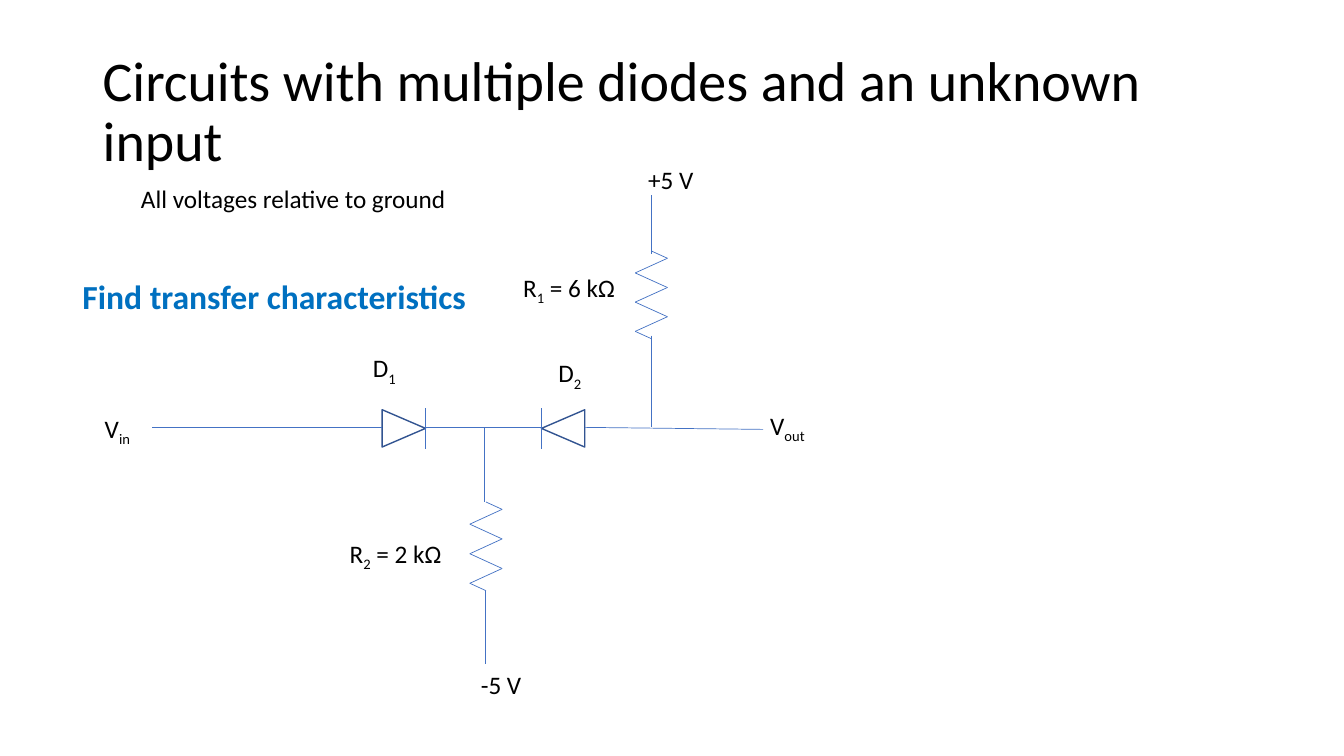
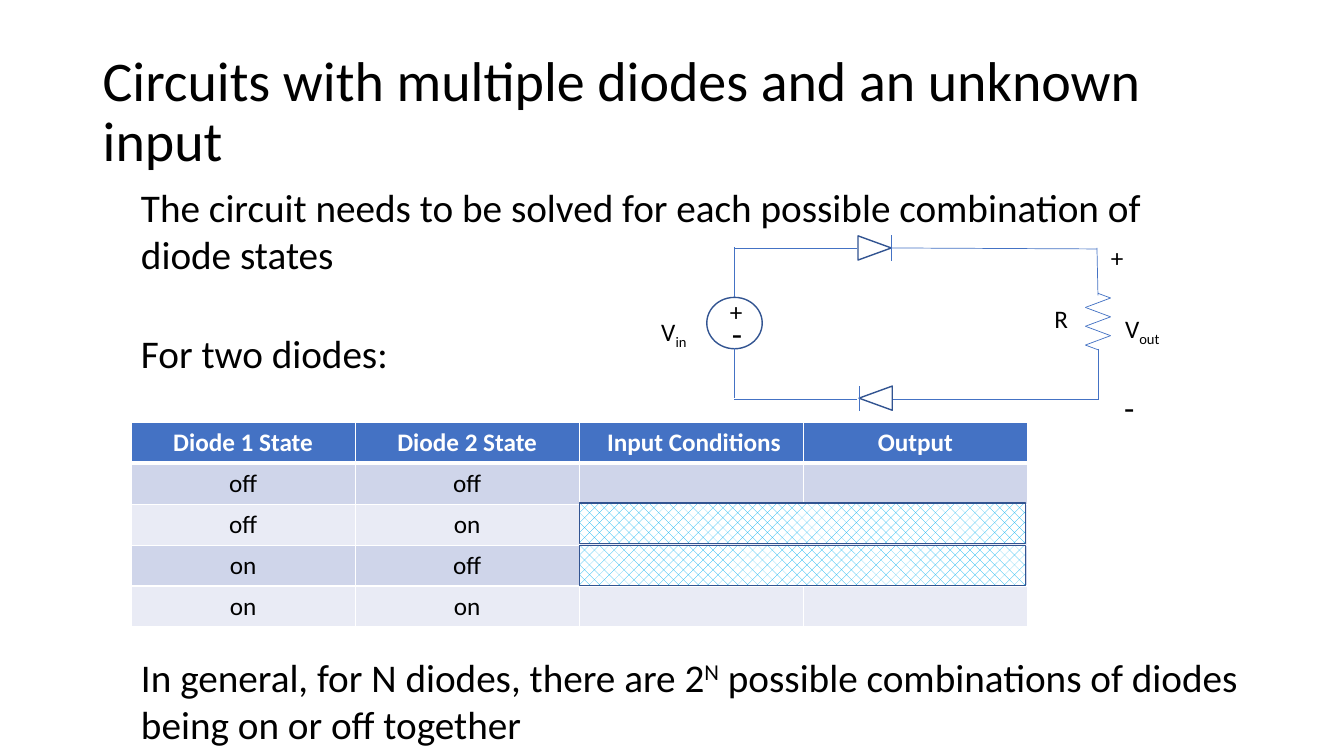
from dataclasses import dataclass
from itertools import pairwise

import pptx
import pptx.util
import pptx.dml.color
import pptx.enum.dml
import pptx.enum.shapes
import pptx.enum.text
import pptx.oxml
import pptx.oxml.ns

Inches = pptx.util.Inches
Pt = pptx.util.Pt
Shape = pptx.enum.shapes.MSO_SHAPE
Anchor = pptx.enum.text.MSO_ANCHOR
Align = pptx.enum.text.PP_ALIGN
TITLE = "Circuits with multiple diodes and an unknown input"
SUB, SUP = -25000, 30000


# Colours and type sizes
@dataclass(frozen=True)
class Theme:
    font: str = "Calibri"
    ink: str = "000000"
    white: str = "FFFFFF"
    accent: str = "0070C0"
    wire: str = "4472C4"
    edge: str = "325491"
    hatch: str = "00B0F0"
    head: str = "4472C4"
    bands: tuple = ("CFD5EA", "E9EBF5")
    title: int = 40
    body: int = 28
    large: int = 24
    small: int = 18
    thin: float = 0.5
    line: float = 1


THEME = Theme()


# Repeated parts; lengths are in inches
@dataclass(frozen=True)
class Label:
    x: float
    y: float
    w: float
    h: float
    runs: tuple  # (text, baseline shift) pairs
    size: int = THEME.small
    color: str = THEME.ink
    bold: bool = False


@dataclass(frozen=True)
class Wire:
    x1: float
    y1: float
    x2: float
    y2: float


@dataclass(frozen=True)
class Diode:
    tip: float
    y: float
    long: float
    wide: float
    bar: float
    way: int  # 1 points right, -1 points left


@dataclass(frozen=True)
class Zigzag:
    x: float
    top: float
    wide: float
    high: float


def plain(text: str) -> tuple:
    return ((text, 0),)


def color(code: str):
    return pptx.dml.color.RGBColor.from_string(code)


def add_runs(para, runs: tuple, size: int, code: str, bold: bool = False) -> None:
    for text, shift in runs:
        run = para.add_run()
        run.text = text
        font = run.font
        font.name, font.size, font.bold = THEME.font, Pt(size), bold
        font.color.rgb = color(code)
        if shift:
            run._r.get_or_add_rPr().set("baseline", str(shift))


def add_label(slide, label: Label):
    box = slide.shapes.add_textbox(*map(Inches, (label.x, label.y, label.w, label.h)))
    frame = box.text_frame
    frame.word_wrap = True
    add_runs(frame.paragraphs[0], label.runs, label.size, label.color, label.bold)
    return frame


def add_title(slide) -> None:
    frame = add_label(slide, Label(0.92, 0.4, 11.79, 1.45, plain(TITLE), THEME.title))
    frame.vertical_anchor = Anchor.MIDDLE
    frame.paragraphs[0].line_spacing = 0.9


def add_wire(slide, wire: Wire) -> None:
    line = slide.shapes.add_connector(
        pptx.enum.shapes.MSO_CONNECTOR.STRAIGHT,
        *map(Inches, (wire.x1, wire.y1, wire.x2, wire.y2)))
    line.line.color.rgb = color(THEME.wire)
    line.line.width = Pt(THEME.thin)
    line._element.spPr.append(pptx.oxml.parse_xml(
        f"<a:effectLst {pptx.oxml.ns.nsdecls('a')}/>"))


def add_shape(slide, kind, x: float, y: float, w: float, h: float):
    shape = slide.shapes.add_shape(kind, *map(Inches, (x, y, w, h)))
    shape.shadow.inherit = False
    shape.fill.background()
    shape.line.color.rgb = color(THEME.edge)
    shape.line.width = Pt(THEME.line)
    return shape


def add_diode(slide, diode: Diode) -> None:
    mid = diode.tip - diode.way * diode.long / 2
    shape = add_shape(slide, Shape.ISOSCELES_TRIANGLE, mid - diode.wide / 2,
                      diode.y - diode.long / 2, diode.wide, diode.long)
    shape.rotation = 90 * diode.way % 360
    half = diode.bar / 2
    add_wire(slide, Wire(diode.tip, diode.y + half, diode.tip, diode.y - half))


def add_zigzag(slide, part: Zigzag) -> None:
    # Five full strokes with a half stroke at each end
    turns = [(part.x + part.wide / 2 * (-1) ** i, part.top + part.high * (2 * i + 1) / 12)
             for i in range(6)]
    points = [(part.x, part.top), *turns, (part.x, part.top + part.high)]
    for start, end in pairwise(points):
        add_wire(slide, Wire(*start, *end))


DRAW = {Label: add_label, Wire: add_wire, Diode: add_diode, Zigzag: add_zigzag}


def draw(slide, parts: tuple) -> None:
    for part in parts:
        DRAW[type(part)](slide, part)


def add_borders(cell, head: bool) -> None:
    for side in "LRTB":
        width = Pt(3 if head and side == "B" else THEME.line)
        cell._tc.get_or_add_tcPr().append(pptx.oxml.parse_xml(
            f'<a:ln{side} {pptx.oxml.ns.nsdecls("a")} w="{width}"><a:solidFill>'
            f'<a:srgbClr val="{THEME.white}"/></a:solidFill></a:ln{side}>'))


def add_table(slide, rows: tuple) -> None:
    table = slide.shapes.add_table(
        len(rows), 4, *map(Inches, (1.3, 4.19, 8.89, 2.03))).table
    for r, row in enumerate(rows):
        head = r == 0
        for c, text in enumerate(row):
            cell = table.cell(r, c)
            add_borders(cell, head)
            cell.fill.solid()
            cell.fill.fore_color.rgb = color(THEME.head if head else THEME.bands[(r - 1) % 2])
            para = cell.text_frame.paragraphs[0]
            para.alignment = Align.CENTER
            if text:
                add_runs(para, plain(text), THEME.small,
                         THEME.white if head else THEME.ink, head)


def add_cover(slide, y: float) -> None:
    cover = add_shape(slide, Shape.RECTANGLE, 5.75, y, 4.42, 0.4)
    cover.fill.patterned()
    cover.fill.pattern = pptx.enum.dml.MSO_PATTERN.PERCENT_30
    cover.fill.fore_color.rgb = color(THEME.hatch)
    cover.fill.back_color.rgb = color(THEME.white)


V_IN = (("V", 0), ("in", SUB))
V_OUT = (("V", 0), ("out", SUB))

# Slide 1: circuit with two supplies
SUPPLY = (
    Diode(4.22, 4.25, 0.43, 0.37, 0.4, 1),
    Diode(5.37, 4.25, 0.43, 0.37, 0.4, -1),
    Wire(3.79, 4.24, 1.51, 4.24),
    Wire(5.37, 4.24, 4.22, 4.24),
    Wire(5.8, 4.24, 7.57, 4.26),
    Wire(4.8, 4.24, 4.8, 4.98),
    Zigzag(4.82, 4.98, 0.32, 0.88),
    Wire(4.81, 5.86, 4.81, 6.59),
    Wire(6.46, 2.52, 6.46, 1.93),
    Zigzag(6.46, 2.49, 0.32, 0.87),
    Wire(6.46, 3.33, 6.46, 4.24),
    Label(0.94, 4.05, 0.71, 0.4, V_IN),
    Label(7.54, 4.02, 0.71, 0.4, V_OUT),
    Label(3.37, 5.29, 1.3, 0.4, (("R", 0), ("2", SUB), (" = 2 kΩ", 0))),
    Label(5.09, 2.65, 1.3, 0.4, (("R", 0), ("1", SUB), (" = 6 kΩ", 0))),
    Label(4.67, 6.59, 0.71, 0.4, plain("-5 V")),
    Label(6.33, 1.58, 0.71, 0.4, plain("+5 V")),
    Label(3.6, 3.45, 0.63, 0.4, (("D", 0), ("1", SUB))),
    Label(5.44, 3.5, 0.63, 0.4, (("D", 0), ("2", SUB))),
    Label(1.3, 1.77, 3.29, 0.4, plain("All voltages relative to ground")),
    Label(0.72, 2.69, 4.14, 0.5, plain("Find transfer characteristics"),
          THEME.large, THEME.accent, True),
)

# Slide 2: text, states and loop
NOTES = (
    Label(1.3, 1.77, 10.52, 1.04, plain(
        "The circuit needs to be solved for each possible combination of diode states"),
        THEME.body),
    Label(1.3, 3.22, 3.91, 0.57, plain("For two diodes:"), THEME.body),
    Label(1.3, 6.43, 11.12, 1.04, (
        ("In general, for N diodes, there are 2", 0), ("N", SUP),
        (" possible combinations of diodes being on or off together", 0)), THEME.body),
)
STATES = (
    ("Diode 1 State", "Diode 2 State", " Input Conditions", "Output"),
    ("off", "off", "", ""),
    ("off", "on", "", ""),
    ("on", "off", "", ""),
    ("on", "on", "", ""),
)
LOOP = (
    Wire(7.28, 2.45, 7.28, 2.95),
    Wire(7.28, 3.45, 7.28, 3.95),
    Wire(7.28, 2.46, 8.5, 2.46),
    Diode(8.84, 2.46, 0.33, 0.24, 0.25, 1),
    Wire(8.84, 2.46, 10.88, 2.47),
    Wire(10.88, 2.46, 10.89, 2.93),
    Zigzag(10.89, 2.91, 0.25, 0.56),
    Wire(10.89, 3.46, 10.89, 3.97),
    Wire(7.28, 3.96, 8.5, 3.96),
    Diode(8.52, 3.95, 0.33, 0.24, 0.25, -1),
    Wire(8.86, 3.96, 10.9, 3.96),
    Label(7.14, 2.89, 0.28, 0.26, plain("+")),
    Label(7.16, 3.05, 0.28, 0.32, plain("-"), THEME.large),
    Label(6.46, 3.09, 0.55, 0.26, V_IN),
    Label(10.36, 2.96, 0.55, 0.26, plain("R")),
    Label(11.05, 3.79, 0.28, 0.32, plain("-"), THEME.large),
    Label(10.92, 2.35, 0.28, 0.26, plain("+")),
    Label(11.06, 3.06, 0.76, 0.4, V_OUT),
)


def main() -> None:
    deck = pptx.Presentation()
    deck.slide_width, deck.slide_height = Inches(13.33), Inches(7.5)
    first, second = (deck.slides.add_slide(deck.slide_layouts[6]) for _ in range(2))
    for slide in (first, second):
        add_title(slide)

    draw(first, SUPPLY)

    draw(second, NOTES)
    add_table(second, STATES)
    add_shape(second, Shape.OVAL, 7.01, 2.95, 0.55, 0.51)
    draw(second, LOOP)
    for row in range(2):
        add_cover(second, 4.99 + 0.42 * row)

    deck.save("out.pptx")


if __name__ == "__main__":
    main()
